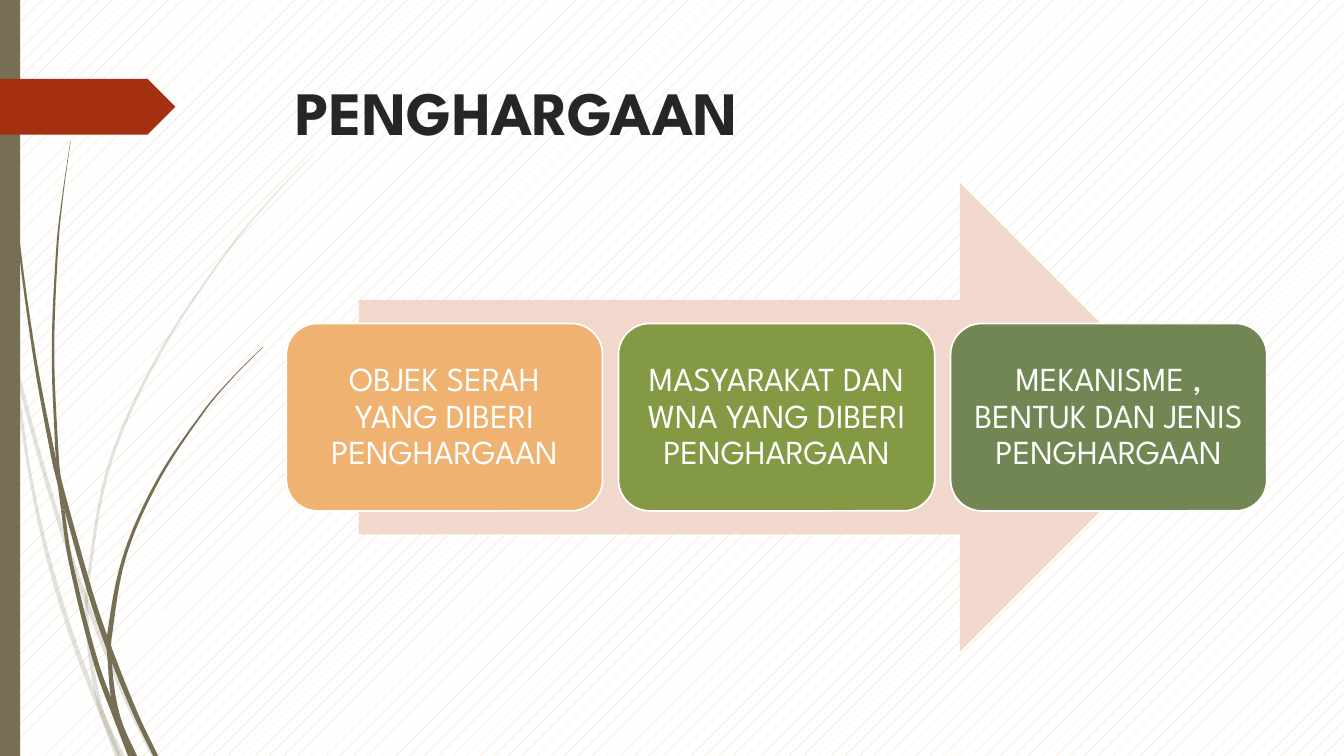
from pptx import Presentation
from pptx.dml.color import RGBColor as RGB
from pptx.enum.dml import MSO_PATTERN as PATTERN
from pptx.enum.shapes import MSO_SHAPE as SHAPE
from pptx.enum.text import MSO_ANCHOR as ANCHOR, PP_ALIGN as ALIGN
from pptx.oxml.ns import qn
from pptx.util import Pt

COLORS = {
    "paper": "FFFFFF", "dots": "F5CBA0", "olive": "766F54", "flag": "A53010",
    "title": "262626", "arrow": "F2D8CC", "white": "FFFFFF",
    "orange": "F0B270", "green": "839943", "moss": "728653",
}
FONT = "League Spartan"
STEPS = 6
CARDS = [
    ("OBJEK SERAH YANG DIBERI PENGHARGAAN", "orange"),
    ("MASYARAKAT DAN WNA YANG DIBERI PENGHARGAAN", "green"),
    ("MEKANISME , BENTUK DAN JENIS PENGHARGAAN", "moss"),
]
PALE_WISPS = [
    ([1, 5], [(203, 0, 0), (248, 7.2, 2.9), (271, 12.2, 2.9), (323, 26, 3),
              (376, 41.8, 3.2), (431, 60.5, 3.5), (500, 88.6, 3.5),
              (540, 108, 3.6)]),
    ([6], [(252, 8, 0), (271, 10.4, 1.8), (338, 20.2, 2.2), (393, 31.6, 2.9),
           (446, 46.8, 3.6), (493, 64, 3.4), (514, 72.7, 3.6),
           (540, 82, 4.3)]),
    ([6, 7, 10], [(110, 224.6, 0.1), (126, 208, 0.9), (142, 193, 1.2),
                  (176, 164.2, 1.6), (251, 113.8, 2.1), (332, 77, 2.3),
                  (420, 61.2, 2.2), (439, 60.8, 2.5), (465, 62.6, 2.9),
                  (492, 67, 3.2), (512, 72, 3.6), (540, 84.2, 5)]),
]
DARK_WISPS = [
    ([5, 8], [(0, 2.2, 0.7), (79, 5, 0.7), (168, 12.2, 1.4), (256, 23.8, 2.2),
              (326, 36.4, 3.2), (343, 40.4, 3.6), (364, 46, 3.6),
              (426, 63.4, 3.8), (464, 76.3, 4), (510, 95, 3.7),
              (540, 109.4, 3.6)]),
    ([4, 6, 9], [(101, 50.3, 0.2), (139, 44.6, 0.7), (176, 40.3, 1.4),
                 (251, 37, 1.8), (323, 39.6, 2.2), (343, 41, 2.5),
                 (364, 43.6, 2.5), (401, 49, 2.9), (474, 67, 3.6),
                 (518, 83, 4.2), (540, 91.4, 4.5)]),
    ([5, 6, 8], [(248, 187.5, 0.5), (269, 166.3, 0.9), (292, 146.2, 1.4),
                 (342, 112.3, 2.2), (397, 87.8, 2.5), (455, 76.3, 3.6),
                 (472, 77, 2.9), (498, 79.2, 3.6), (518, 84, 4),
                 (540, 92.2, 5.8)]),
]


def rgb(name):
    """Return the named colour."""
    return RGB.from_string(COLORS[name])


def apply(obj, values):
    """Set each attribute of obj from a dict."""
    for key, value in values.items():
        setattr(obj, key, value)


def paint(sp, fill, line=None):
    """Give a shape a flat fill and an optional outline."""
    sp.shadow.inherit = False
    sp.fill.solid()
    sp.fill.fore_color.rgb = rgb(fill)
    if line:
        sp.line.color.rgb = rgb(line)
        sp.line.width = Pt(1.25)
    else:
        sp.line.fill.background()


def add_box(s, kind, box, fill, line=None):
    """Add a painted preset shape in a box given in points."""
    sp = s.shapes.add_shape(kind, *map(Pt, box))
    paint(sp, fill, line)
    return sp


def write(tf, text, size, color, align, bold=False):
    """Write one formatted paragraph and return it."""
    p = tf.paragraphs[0]
    p.alignment = align
    r = p.add_run()
    r.text = text
    apply(r.font, {"name": FONT, "size": Pt(size), "bold": bold})
    r.font.color.rgb = rgb(color)
    return p


def smooth(knots):
    """Sample a Hermite curve, run by height, through the knots."""
    ends = [knots[0], *knots, knots[-1]]
    slopes = [[(v - u) / (c[0] - a[0]) for u, v in zip(a, c)]
              for a, c in zip(ends, ends[2:])]
    samples = []
    for a, b, m, n in zip(knots, knots[1:], slopes, slopes[1:]):
        h = b[0] - a[0]
        for t in (i / STEPS for i in range(STEPS)):
            k = t * t * (3 - 2 * t)
            samples.append([
                u + (v - u) * k + h * t * (1 - t) * (p * (1 - t) - q * t)
                for u, v, p, q in zip(a, b, m, n)])
    return samples + [knots[-1]]


def add_blade(s, box, blade, opacity):
    """Draw one blade from samples of height, left edge and width."""
    x0, y0 = box[:2]
    outline = [(x, y) for y, x, w in blade]
    outline += [(x + w, y) for y, x, w in reversed(blade)]
    points = [(Pt(x0 + x), Pt(y0 + y)) for x, y in outline]
    fb = s.shapes.build_freeform(*points[0])
    fb.add_line_segments(points[1:], close=True)
    sp = fb.convert_to_shape()
    paint(sp, "olive")
    if opacity < 100:
        clr = next(sp.fill._xPr.iter(qn("a:srgbClr")))
        alpha = clr.makeelement(qn("a:alpha"), {"val": str(opacity * 1000)})
        clr.append(alpha)


def add_margin(s, box):
    """Draw the wisps, cut into blades, the side bar and the flag."""
    x, y, w, h = box
    for wisps, opacity in ((PALE_WISPS, 20), (DARK_WISPS, 100)):
        for cuts, knots in wisps:
            samples = smooth(knots)
            for a, b in zip([0, *cuts], [*cuts, len(knots) - 1]):
                blade = samples[a * STEPS:b * STEPS + 1]
                add_blade(s, box, blade, opacity)
    add_box(s, SHAPE.RECTANGLE, (x, y, 14.4, h), "olive")
    add_box(s, SHAPE.PENTAGON, (x, y + 56.4, w, 39.8), "flag")


def add_title(s, box, text):
    """Place and format the title placeholder."""
    sp = s.shapes.title
    apply(sp, dict(zip(("left", "top", "width", "height"), map(Pt, box))))
    apply(sp.text_frame, {"vertical_anchor": ANCHOR.TOP, "word_wrap": True})
    write(sp.text_frame, text, 44, "title", ALIGN.LEFT, bold=True)


def add_process(s, box):
    """Draw the wide arrow with a row of cards over it."""
    x, y, w, h = box
    add_box(s, SHAPE.RIGHT_ARROW, (x + w * 0.074, y, w * 0.852, h), "arrow")
    n = len(CARDS)
    card_w = w / (n + (n - 1) / 20)
    for i, (text, fill) in enumerate(CARDS):
        card = (x + i * card_w * 1.05, y + h * 0.3, card_w, h * 0.4)
        sp = add_box(s, SHAPE.ROUNDED_RECTANGLE, card, fill, "white")
        tf = sp.text_frame
        apply(tf, {"word_wrap": True, "vertical_anchor": ANCHOR.MIDDLE})
        apply(tf, {f"margin_{side}": Pt(7.2)
                   for side in ("left", "right", "top", "bottom")})
        p = write(tf, text, 24, "white", ALIGN.CENTER)
        p.line_spacing = 0.9


def build_slide(prs):
    """Build the slide on its dotted background."""
    s = prs.slides.add_slide(prs.slide_layouts[5])
    fill = s.background.fill
    fill.patterned()
    fill.pattern = PATTERN.PERCENT_5
    fill.fore_color.rgb = rgb("dots")
    fill.back_color.rgb = rgb("paper")
    add_margin(s, (0, 0, 125.3, 540))
    add_title(s, (204, 49, 702, 62), "PENGHARGAAN")
    add_process(s, (204.5, 130.6, 700.4, 334.8))


def main():
    """Create and save the presentation."""
    prs = Presentation()
    apply(prs, {"slide_width": Pt(960), "slide_height": Pt(540)})
    build_slide(prs)
    prs.save("out.pptx")


if __name__ == "__main__":
    main()
